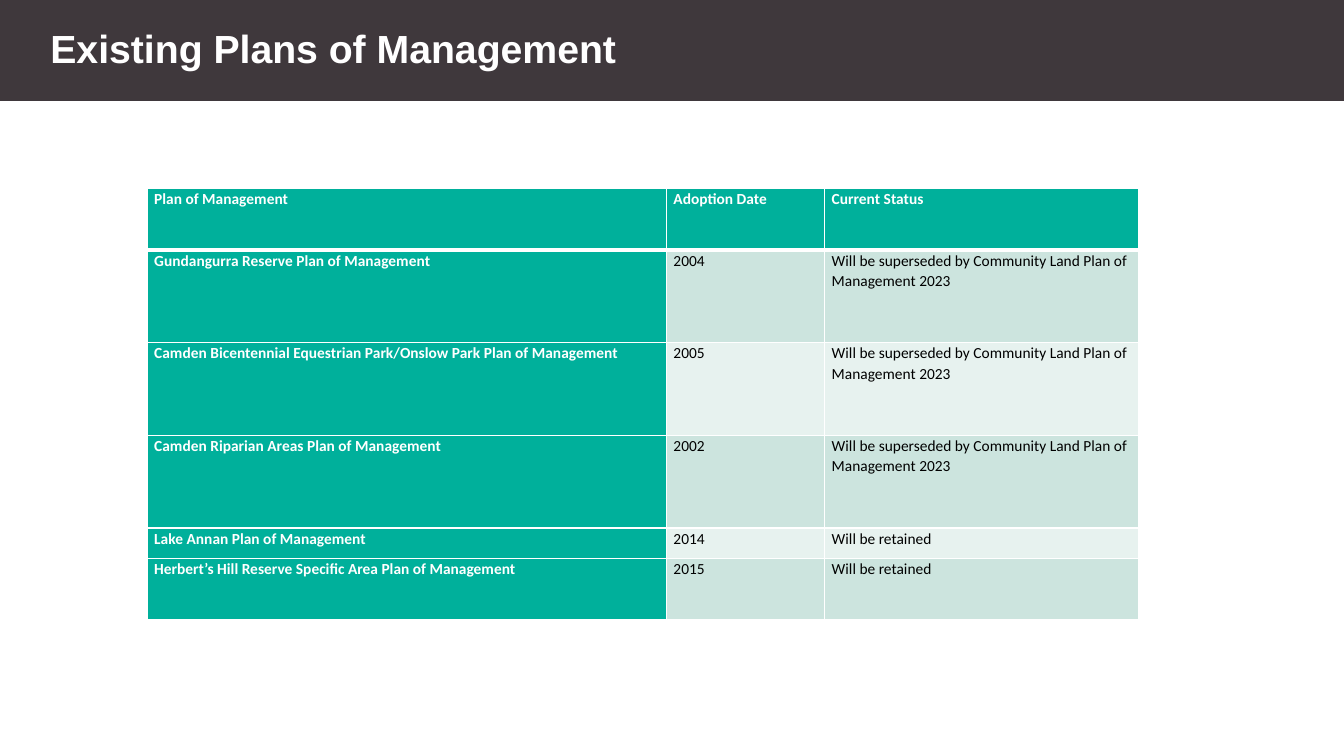
from lxml import etree
from pptx import Presentation
from pptx.dml.color import RGBColor
from pptx.enum.text import MSO_ANCHOR, MSO_AUTO_SIZE, PP_ALIGN
from pptx.oxml.ns import qn
from pptx.util import Inches, Pt

LEFT = PP_ALIGN.LEFT
MIDDLE = MSO_ANCHOR.MIDDLE
NO_AUTOFIT = MSO_AUTO_SIZE.NONE
TITLE_ONLY = 5

CHARCOAL = RGBColor(0x3F, 0x38, 0x3C)
TEAL = RGBColor(0x00, 0xB0, 0x9B)
BAND_DARK = RGBColor(0xCC, 0xE4, 0xDE)
BAND_LIGHT = RGBColor(0xE7, 0xF2, 0xEF)
WHITE = RGBColor(0xFF, 0xFF, 0xFF)
BLACK = RGBColor(0x00, 0x00, 0x00)

SUPERSEDED = "Will be superseded by Community Land Plan of Management 2023"
RETAINED = "Will be retained"
PLANS = [
    ("Plan of Management", "Adoption Date", "Current Status"),
    ("Gundangurra Reserve Plan of Management", "2004", SUPERSEDED),
    ("Camden Bicentennial Equestrian Park/Onslow Park Plan of Management", "2005", SUPERSEDED),
    ("Camden Riparian Areas Plan of Management", "2002", SUPERSEDED),
    ("Lake Annan Plan of Management", "2014", RETAINED),
    ("Herbert’s Hill Reserve Specific Area Plan of Management", "2015", RETAINED),
]
COLUMN_WIDTHS = [5.15, 1.57, 3.11]
ROW_HEIGHTS = [0.61, 0.92, 0.92, 0.92, 0.3, 0.61]


def format_text(para, font_name, size, color, bold):
    for run in para.runs:
        run.font.name = font_name
        run.font.size = Pt(size)
        run.font.color.rgb = color
        run.font.bold = bold


def add_title_band(slide, text):
    title = slide.shapes.title
    title.left, title.top = Inches(0), Inches(-0.06)
    title.width, title.height = Inches(13.33), Inches(1.06)
    title.fill.solid()
    title.fill.fore_color.rgb = CHARCOAL
    frame = title.text_frame
    frame.text = text
    frame.auto_size = NO_AUTOFIT
    frame.vertical_anchor = MIDDLE
    frame.margin_left = Inches(0.5)
    para = frame.paragraphs[0]
    para.alignment = LEFT
    format_text(para, "Arial", 28, WHITE, True)


def set_borders(cell, widths):
    properties = cell._tc.get_or_add_tcPr()
    for side, width in widths.items():
        line = etree.SubElement(properties, qn(f"a:{side}"), w=str(Pt(width)))
        fill = etree.SubElement(line, qn("a:solidFill"))
        etree.SubElement(fill, qn("a:srgbClr"), val=str(WHITE))


def fill_cell(cell, text, row, column):
    emphasized = row == 0 or column == 0
    # Borders come before the fill in the cell properties
    set_borders(cell, {
        "lnL": 1,
        "lnR": 1,
        "lnT": 3 if row == 1 else 1,
        "lnB": 3 if row == 0 else 1,
    })
    cell.fill.solid()
    band = BAND_DARK if row % 2 else BAND_LIGHT
    cell.fill.fore_color.rgb = TEAL if emphasized else band

    cell.margin_left = cell.margin_right = Inches(0.07)
    cell.margin_top = cell.margin_bottom = Inches(0)
    cell.text_frame.text = text
    para = cell.text_frame.paragraphs[0]
    para.line_spacing = 1.07
    para.space_after = Pt(8)
    format_text(para, "Calibri", 11, WHITE if emphasized else BLACK, emphasized)


def add_plan_table(slide):
    frame = slide.shapes.add_table(
        len(PLANS), len(COLUMN_WIDTHS), Inches(1.46), Inches(1.87),
        Inches(sum(COLUMN_WIDTHS)), Inches(sum(ROW_HEIGHTS)))
    table = frame.table
    table.first_col = True
    for column, width in zip(table.columns, COLUMN_WIDTHS):
        column.width = Inches(width)
    for row, height in zip(table.rows, ROW_HEIGHTS):
        row.height = Inches(height)
    for row_index, plan in enumerate(PLANS):
        for column_index, text in enumerate(plan):
            fill_cell(table.cell(row_index, column_index), text, row_index, column_index)


def main():
    deck = Presentation()
    deck.slide_width, deck.slide_height = Inches(13.33), Inches(7.5)
    page = deck.slides.add_slide(deck.slide_layouts[TITLE_ONLY])
    add_title_band(page, "Existing Plans of Management")
    add_plan_table(page)
    deck.save("out.pptx")


if __name__ == "__main__":
    main()
